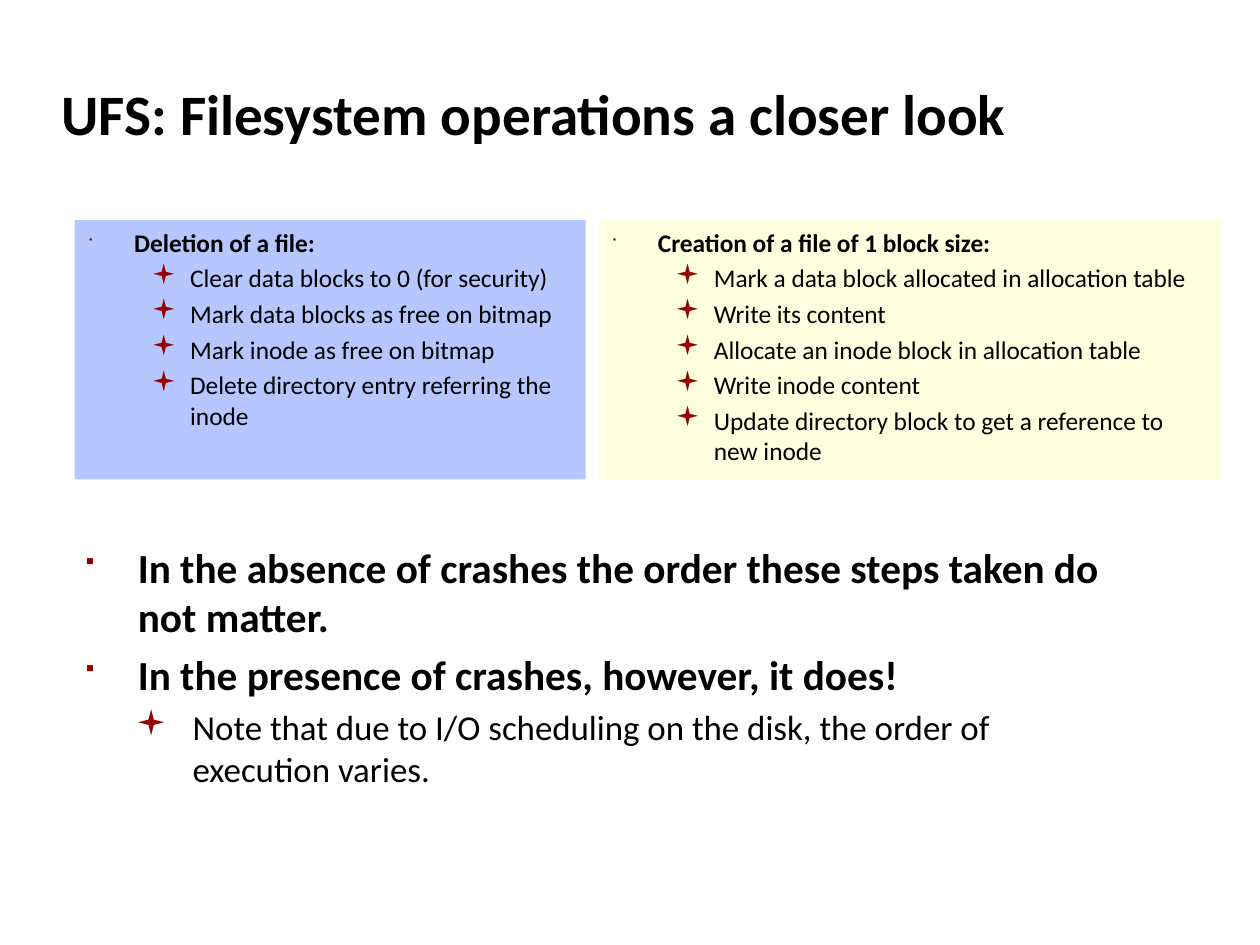
from lxml import etree
from pptx import Presentation
from pptx.dml.color import RGBColor
from pptx.enum.shapes import MSO_SHAPE as Shape
from pptx.enum.text import MSO_ANCHOR as Anchor, PP_ALIGN as Align
from pptx.oxml.ns import qn
from pptx.util import Emu, Inches, Pt

COLORS = {"text": "000000", "bullet": "990000",
          "deletion": "B6C7FF", "creation": "FEFFDE"}

# Level: bullet, bullet size %, left margin, hanging indent, font size, bold
BODY_LEVELS = [("■", 100, 0.62, 0.5, 26, True),
               ("▪", 100, 1.1, 0.5, 22, False)]
PANEL_LEVELS = [("■", 60, 0.41, 0.41, 16, True),
                ("▪", 110, 0.9, 0.34, 16, False)]

DELETION = [
    (0, "Deletion of a file:"),
    (1, "Clear data blocks to 0 (for security)"),
    (1, "Mark data blocks as free on bitmap"),
    (1, "Mark inode as free on bitmap"),
    (1, "Delete directory entry referring the inode"),
]
CREATION = [
    (0, "Creation of a file of 1 block size:"),
    (1, "Mark a data block allocated in allocation table"),
    (1, "Write its content"),
    (1, "Allocate an inode block in allocation table"),
    (1, "Write inode content"),
    (1, "Update directory block to get a reference to new inode"),
]
CONCLUSIONS = [
    (0, "In the absence of crashes the order these steps taken do not matter."),
    (0, "In the presence of crashes, however, it does!"),
    (1, "Note that due to I/O scheduling on the disk, the order of execution varies."),
]


class SlideBuilder:
    """Places elements by percentages of the slide's width and height."""

    font_name = "Calibri"
    bullet_font = "Wingdings"

    def __init__(self, width, height):
        self.deck = Presentation()
        self.deck.slide_width, self.deck.slide_height = width, height
        self.slide = self.deck.slides.add_slide(self.deck.slide_layouts[6])

    def box(self, left, top, width, height):
        across, down = self.deck.slide_width / 100, self.deck.slide_height / 100
        return [round(share * unit) for share, unit in
                zip((left, top, width, height), (across, down, across, down))]

    def frame(self, shape, anchor=Anchor.TOP):
        frame = shape.text_frame
        frame.word_wrap = True
        frame.vertical_anchor = anchor
        frame.margin_left = frame.margin_right = Inches(0.11)
        frame.margin_top = frame.margin_bottom = Inches(0.06)
        return frame

    def style(self, paragraph, size, bold):
        paragraph.alignment = Align.LEFT
        font = paragraph.font
        font.name, font.size, font.bold = self.font_name, Pt(size), bold
        font.color.rgb = RGBColor.from_string(COLORS["text"])

    def bullet(self, paragraph, mark, percent, margin, hanging):
        props = paragraph._p.get_or_add_pPr()
        props.set("marL", str(Inches(margin)))
        props.set("indent", str(-Inches(hanging)))
        color = etree.SubElement(props, qn("a:buClr"))
        etree.SubElement(color, qn("a:srgbClr"), val=COLORS["bullet"])
        etree.SubElement(props, qn("a:buSzPct"), val=str(percent * 1000))
        etree.SubElement(props, qn("a:buFont"), typeface=self.bullet_font, charset="2")
        etree.SubElement(props, qn("a:buChar"), char=mark)

    def outline(self, frame, items, levels):
        for index, (level, text) in enumerate(items):
            paragraph = frame.add_paragraph() if index else frame.paragraphs[0]
            paragraph.text, paragraph.level = text, level
            mark, percent, margin, hanging, size, bold = levels[level]
            paragraph.space_before = Pt(0.2 * size)
            self.bullet(paragraph, mark, percent, margin, hanging)
            self.style(paragraph, size, bold)

    def title(self, text, *area):
        heading = self.slide.shapes.add_textbox(*self.box(*area))
        paragraph = self.frame(heading, Anchor.MIDDLE).paragraphs[0]
        paragraph.text = text
        self.style(paragraph, 36, True)

    def body(self, items, *area):
        textbox = self.slide.shapes.add_textbox(*self.box(*area))
        self.outline(self.frame(textbox), items, BODY_LEVELS)

    def panel(self, items, color, *area):
        panel = self.slide.shapes.add_shape(Shape.RECTANGLE, *self.box(*area))
        panel.shadow.inherit = False
        panel.fill.solid()
        panel.fill.fore_color.rgb = RGBColor.from_string(COLORS[color])
        panel.line.fill.background()
        self.outline(self.frame(panel), items, PANEL_LEVELS)


def main():
    builder = SlideBuilder(Emu(10080625), Emu(7559675))
    builder.title("UFS: Filesystem operations a closer look", 3.9, 6.4, 83, 11.1)
    builder.body(CONCLUSIONS, 4.32, 56.65, 86.4, 35.7)
    panel_top, panel_height = 23.3, 27.45
    builder.panel(CREATION, "creation", 47.5, panel_top, 49.45, panel_height)
    builder.panel(DELETION, "deletion", 5.93, panel_top, 40.55, panel_height)
    builder.deck.save("out.pptx")


if __name__ == "__main__":
    main()
